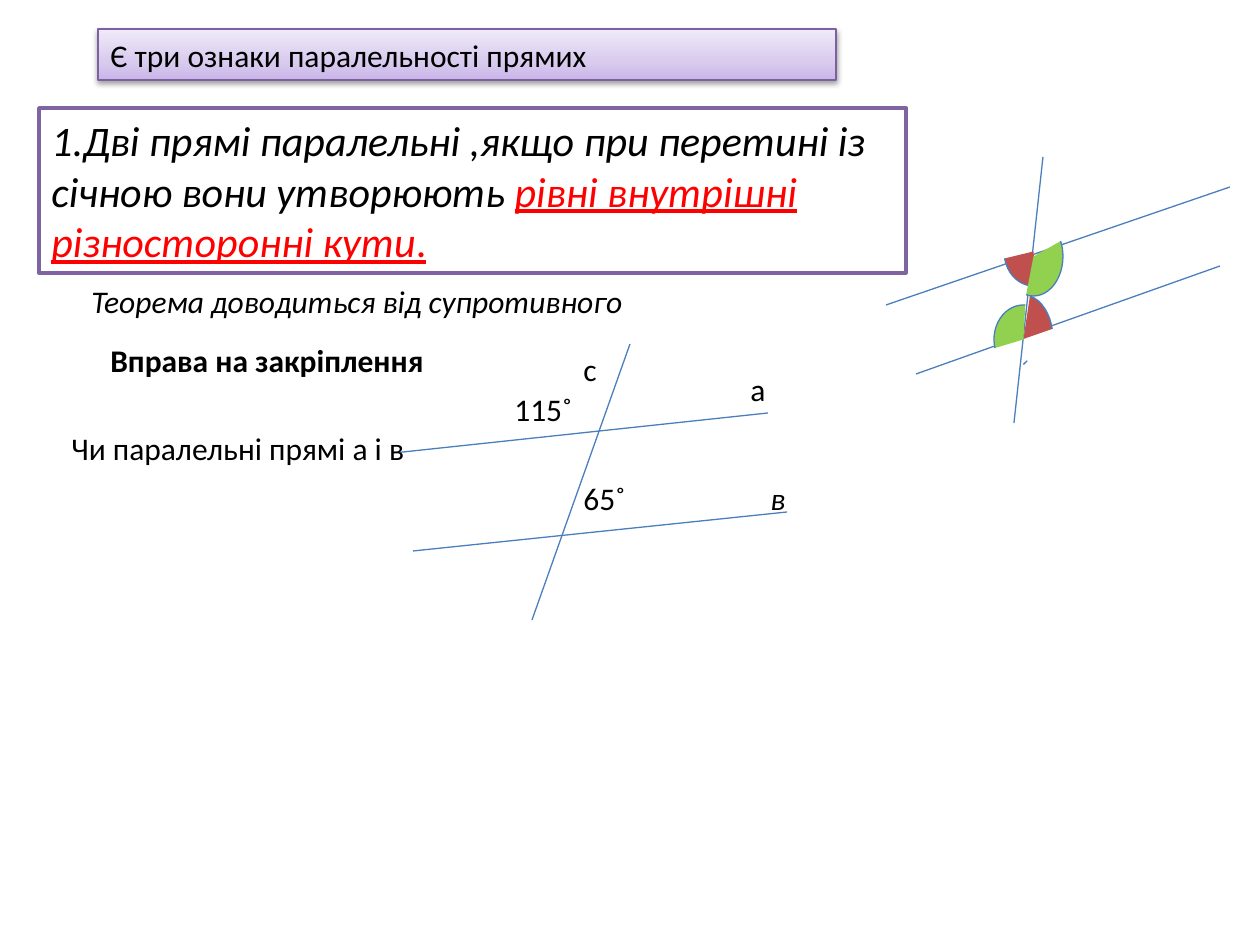
from dataclasses import dataclass
from typing import Optional

import pptx
import pptx.dml.color
import pptx.enum.shapes
import pptx.enum.text
import pptx.oxml
import pptx.oxml.ns
import pptx.util
from lxml import etree

EMU_PER_PX = 914400 / 126
ADJ_PER_DEGREE = 0.6


@dataclass(frozen=True)
class Theme:
    font: str = "Calibri"
    body: int = 18
    rule: int = 24
    ink: str = "000000"
    accent: str = "FF0000"
    paper: str = "FFFFFF"
    line: str = "4B7EBC"
    red: str = "C0504D"
    green: str = "92D050"
    title_line: str = "7D60A0"
    rule_line: str = "8064A2"
    title_stops: tuple = ((0, "C9B5E8"), (35, "D8CBEE"), (100, "F0EAF9"))
    thin: float = 0.75
    thick: float = 2


THEME = Theme()


@dataclass(frozen=True)
class Run:
    text: str
    size: int = THEME.body
    color: str = THEME.ink
    bold: bool = False
    italic: bool = False
    underline: bool = False


@dataclass(frozen=True)
class Line:
    x1: int
    y1: int
    x2: int
    y2: int


@dataclass(frozen=True)
class Arc:
    x: int
    y: int
    w: int
    h: int
    start: float
    end: float
    fill: Optional[str] = None
    flip: bool = False


@dataclass(frozen=True)
class Label:
    x: int
    y: int
    w: int
    run: Run


LABEL_HEIGHT = 51

ANGLE_LINES = [
    Line(886, 305, 1230, 187),
    Line(916, 374, 1220, 266),
    Line(1043, 157, 1014, 423),
]
ARCS = [
    Arc(1004, 217, 59, 69, 193.66, 275.69, THEME.red, flip=True),
    Arc(994, 295, 59, 88, 278.56, 340.85, THEME.red),
    Arc(1004, 217, 59, 79, 330.47, 100.85, THEME.green),
    Arc(1014, 344, 126, 87, 203.2, 208.12),
    Arc(994, 305, 59, 69, 163.23, 272.96, THEME.green),
]
EXERCISE_LINES = [
    Line(394, 453, 768, 413),
    Line(413, 551, 787, 512),
    Line(630, 344, 532, 620),
]
LABELS = [
    Label(79, 276, 561, Run("Теорема доводиться від супротивного", italic=True)),
    Label(59, 423, 364, Run("Чи паралельні прямі а і в")),
    Label(738, 364, 39, Run("а")),
    Label(758, 473, 39, Run("в", italic=True)),
    Label(571, 344, 49, Run("с")),
    Label(571, 473, 69, Run("65˚")),
    Label(502, 384, 88, Run("115˚")),
    Label(98, 335, 364, Run("Вправа на закріплення", bold=True)),
]
RULE_RUNS = [
    Run("1.Дві прямі паралельні ,якщо при перетині із січною вони утворюють ",
        THEME.rule, italic=True),
    Run("рівні внутрішні різносторонні кути", THEME.rule, THEME.accent,
        italic=True, underline=True),
    Run(".", THEME.rule, THEME.accent, underline=True),
]


def px(n: int) -> int:
    return round(n * EMU_PER_PX)


def rgb(color: str) -> pptx.dml.color.RGBColor:
    return pptx.dml.color.RGBColor.from_string(color)


def set_line(sp, color: str, width: float) -> None:
    sp.line.color.rgb = rgb(color)
    sp.line.width = pptx.util.Pt(width)


def write(sp, runs: list[Run]) -> None:
    tf = sp.text_frame
    tf.word_wrap = True
    p = tf.paragraphs[0]
    p.alignment = pptx.enum.text.PP_ALIGN.LEFT
    for item in runs:
        r = p.add_run()
        r.text = item.text
        r.font.name = THEME.font
        r.font.size = pptx.util.Pt(item.size)
        r.font.color.rgb = rgb(item.color)
        r.font.bold = item.bold
        r.font.italic = item.italic
        r.font.underline = item.underline


def add_shape(s, kind, x: int, y: int, w: int, h: int):
    sp = s.shapes.add_shape(kind, px(x), px(y), px(w), px(h))
    sp.shadow.inherit = False
    return sp


def add_line(s, line: Line) -> None:
    sp = s.shapes.add_connector(
        pptx.enum.shapes.MSO_CONNECTOR.STRAIGHT,
        px(line.x1), px(line.y1), px(line.x2), px(line.y2))
    set_line(sp, THEME.line, THEME.thin)
    etree.SubElement(sp._element.spPr, pptx.oxml.ns.qn("a:effectLst"))


def add_arc(s, arc: Arc) -> None:
    sp = add_shape(s, pptx.enum.shapes.MSO_SHAPE.ARC, arc.x, arc.y, arc.w, arc.h)
    sp.adjustments[0] = arc.start * ADJ_PER_DEGREE
    sp.adjustments[1] = arc.end * ADJ_PER_DEGREE
    if arc.fill:
        sp.fill.solid()
        sp.fill.fore_color.rgb = rgb(arc.fill)
    else:
        sp.fill.background()
    set_line(sp, THEME.line, THEME.thin)
    if arc.flip:
        sp._element.spPr.xfrm.set("flipV", "1")


def add_label(s, label: Label) -> None:
    sp = s.shapes.add_textbox(px(label.x), px(label.y), px(label.w), px(LABEL_HEIGHT))
    write(sp, [label.run])


def add_title(s) -> None:
    sp = add_shape(s, pptx.enum.shapes.MSO_SHAPE.RECTANGLE, 98, 29, 738, LABEL_HEIGHT)
    sp.fill.gradient()
    grad = sp._element.spPr.find(pptx.oxml.ns.qn("a:gradFill"))
    stops = "".join(f'<a:gs pos="{pos * 1000}"><a:srgbClr val="{color}"/></a:gs>'
                    for pos, color in THEME.title_stops)
    ns = pptx.oxml.ns.nsdecls("a")
    grad.getparent().replace(grad, pptx.oxml.parse_xml(
        f'<a:gradFill {ns} rotWithShape="1"><a:gsLst>{stops}</a:gsLst>'
        '<a:lin ang="16200000" scaled="0"/></a:gradFill>'))
    set_line(sp, THEME.title_line, THEME.thin)
    effects = sp._element.spPr.find(pptx.oxml.ns.qn("a:effectLst"))
    effects.append(pptx.oxml.parse_xml(
        f'<a:outerShdw {ns} blurRad="39370" dist="20320" dir="5400000" rotWithShape="0">'
        f'<a:srgbClr val="{THEME.ink}"><a:alpha val="38000"/></a:srgbClr></a:outerShdw>'))
    write(sp, [Run("Є три ознаки паралельності прямих")])


def add_rule(s) -> None:
    sp = add_shape(s, pptx.enum.shapes.MSO_SHAPE.RECTANGLE, 39, 108, 867, 165)
    sp.fill.solid()
    sp.fill.fore_color.rgb = rgb(THEME.paper)
    set_line(sp, THEME.rule_line, THEME.thick)
    write(sp, RULE_RUNS)


def main() -> None:
    prs = pptx.Presentation()
    prs.slide_width = pptx.util.Inches(10)
    prs.slide_height = pptx.util.Inches(7.5)
    s = prs.slides.add_slide(prs.slide_layouts[6])
    add_title(s)
    add_rule(s)
    for line in ANGLE_LINES:
        add_line(s, line)
    for arc in ARCS:
        add_arc(s, arc)
    for line in EXERCISE_LINES:
        add_line(s, line)
    for label in LABELS:
        add_label(s, label)
    prs.save("out.pptx")


if __name__ == "__main__":
    main()
